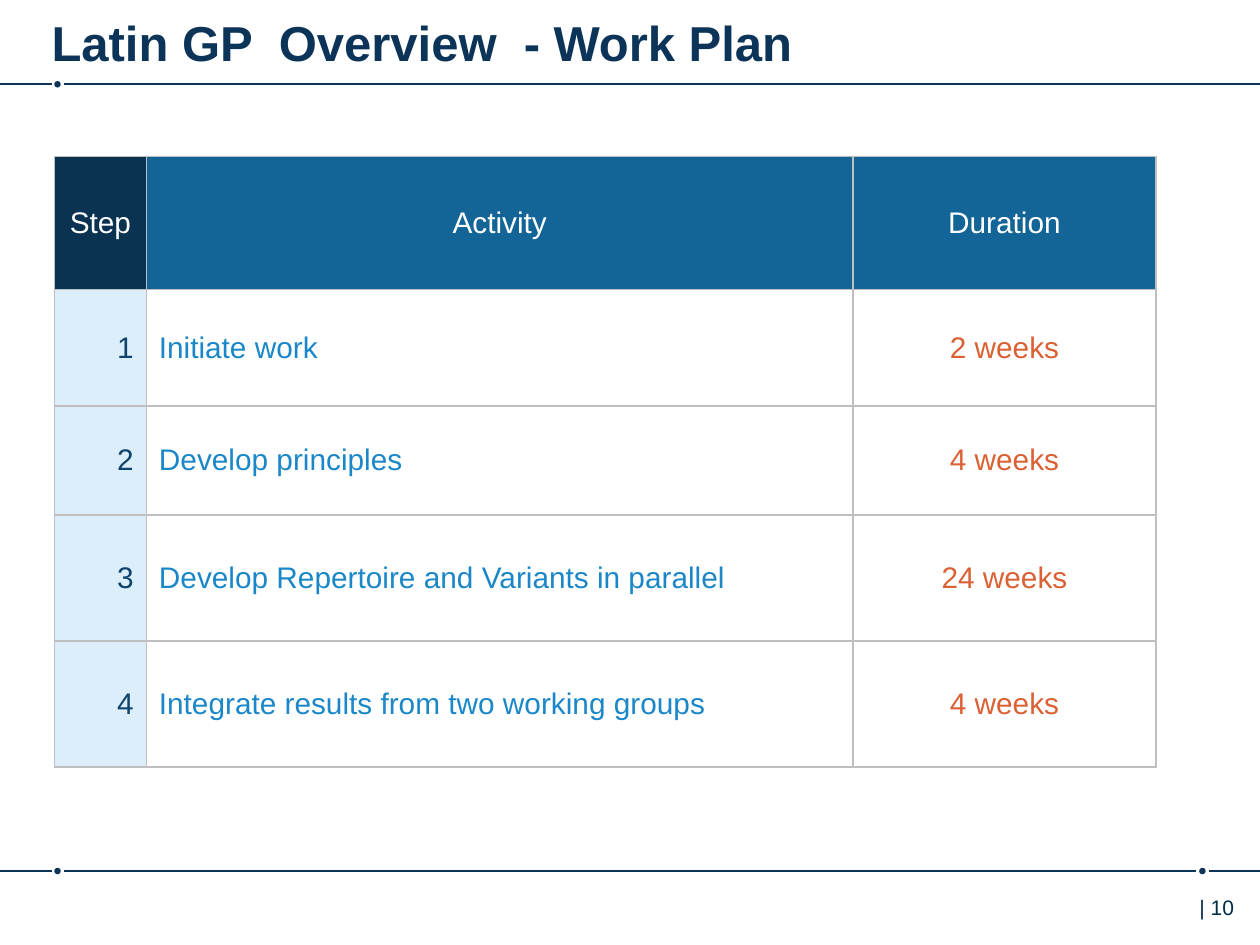
from lxml import etree
from pptx import Presentation
from pptx.dml.color import RGBColor
from pptx.enum import shapes, text
from pptx.oxml import ns
from pptx.util import Cm, Pt

NAVY = RGBColor(0x0C, 0x34, 0x58)
STEP_HEADER = RGBColor(0x0A, 0x32, 0x51)
HEADER = RGBColor(0x13, 0x65, 0x97)
PALE_BLUE = RGBColor(0xCD, 0xE8, 0xF9)
WHITE = RGBColor(0xFF, 0xFF, 0xFF)
STEP_TEXT = RGBColor(0x0D, 0x43, 0x6C)
ACTIVITY_TEXT = RGBColor(0x1A, 0x87, 0xC9)
DURATION_TEXT = RGBColor(0xDB, 0x60, 0x33)
PAGE_TEXT = RGBColor(0x00, 0x2B, 0x49)
BORDER = RGBColor(0xBF, 0xBF, 0xBF)
LEFT, CENTER, RIGHT = text.PP_ALIGN.LEFT, text.PP_ALIGN.CENTER, text.PP_ALIGN.RIGHT


def style_font(paragraph, size, color, bold=False):
    for run in paragraph.runs:
        run.font.name = "Arial"
        run.font.size = Pt(size)
        run.font.bold = bold
        run.font.color.rgb = color


def style_cell(cell, fill, alpha):
    cell.fill.solid()
    cell.fill.fore_color.rgb = fill
    properties = cell._tc.get_or_add_tcPr()
    if alpha < 100:
        tint = properties.find(".//" + ns.qn("a:srgbClr"))
        etree.SubElement(tint, ns.qn("a:alpha"), val=str(alpha * 1000))
    for position, side in enumerate(("lnL", "lnR", "lnT", "lnB")):
        border = etree.Element(ns.qn("a:" + side), w=str(Pt(1)))
        paint = etree.SubElement(border, ns.qn("a:solidFill"))
        etree.SubElement(paint, ns.qn("a:srgbClr"), val=str(BORDER))
        properties.insert(position, border)


deck = Presentation()
deck.slide_width, deck.slide_height = Cm(25.4), Cm(19.05)
slide = deck.slides.add_slide(deck.slide_layouts[5])

TOP_RULE, BOTTOM_RULE = 1.7, 17.56
DOT = 0.13
for x, y in ((1.16, TOP_RULE), (1.16, BOTTOM_RULE), (24.24, BOTTOM_RULE)):
    dot = slide.shapes.add_shape(
        shapes.MSO_SHAPE.OVAL, Cm(x - DOT / 2), Cm(y - DOT / 2), Cm(DOT), Cm(DOT))
    dot.shadow.inherit = False
    dot.fill.solid()
    dot.fill.fore_color.rgb = NAVY
    dot.line.fill.background()

for start, end, y in (
    (1.04, 0, TOP_RULE),
    (25.4, 1.3, TOP_RULE),
    (1.04, 0, BOTTOM_RULE),
    (24.1, 1.3, BOTTOM_RULE),
    (24.37, 25.4, BOTTOM_RULE),
):
    rule = slide.shapes.add_connector(
        shapes.MSO_CONNECTOR.STRAIGHT, Cm(start), Cm(y), Cm(end), Cm(y))
    rule.line.color.rgb = NAVY
    rule.line.width = Pt(1)
    etree.SubElement(rule._element.spPr, ns.qn("a:effectLst"))

page_number = slide.shapes.add_textbox(Cm(24.18), Cm(17.91), Cm(1.22), Cm(1.02))
page_frame = page_number.text_frame
page_frame.text = "| 10"
page_frame.word_wrap = True
page_frame.margin_left = page_frame.margin_right = 0
style_font(page_frame.paragraphs[0], 12, PAGE_TEXT)

title = slide.shapes.title
title.left, title.top, title.width, title.height = Cm(1.04), Cm(0.13), Cm(22.25), Cm(1.24)
title_frame = title.text_frame
title_frame.text = "Latin GP  Overview  - Work Plan"
title_frame.auto_size = text.MSO_AUTO_SIZE.NONE
title_frame.vertical_anchor = text.MSO_ANCHOR.TOP
title_frame.margin_left = title_frame.margin_right = 0
title_frame.margin_top = title_frame.margin_bottom = Cm(0.13)
title_frame.paragraphs[0].alignment = LEFT
style_font(title_frame.paragraphs[0], 28, NAVY, bold=True)

work_plan = (
    ("Step", "Activity", "Duration"),
    ("1", "Initiate work", "2 weeks"),
    ("2", "Develop principles", "4 weeks"),
    ("3", "Develop Repertoire and Variants in parallel", "24 weeks"),
    ("4", "Integrate results from two working groups", "4 weeks"),
)
column_widths = (1.85, 14.25, 6.1)
row_heights = (2.69, 2.34, 2.2, 2.54, 2.54)
header_styles = (
    (STEP_HEADER, WHITE, CENTER),
    (HEADER, WHITE, CENTER),
    (HEADER, WHITE, CENTER),
)
body_styles = (
    (PALE_BLUE, STEP_TEXT, RIGHT),
    (WHITE, ACTIVITY_TEXT, LEFT),
    (WHITE, DURATION_TEXT, CENTER),
)

plan = slide.shapes.add_table(
    len(work_plan), len(column_widths), Cm(1.1), Cm(3.15),
    Cm(sum(column_widths)), Cm(sum(row_heights))).table
plan.first_row = plan.horz_banding = False
for column, width in zip(plan.columns, column_widths):
    column.width = Cm(width)
for row, height in zip(plan.rows, row_heights):
    row.height = Cm(height)

for row_index, entries in enumerate(work_plan):
    styles = body_styles if row_index else header_styles
    for column_index, (entry, style) in enumerate(zip(entries, styles)):
        fill, color, alignment = style
        cell = plan.cell(row_index, column_index)
        cell.text_frame.text = entry
        cell.vertical_anchor = text.MSO_ANCHOR.MIDDLE
        cell.text_frame.paragraphs[0].alignment = alignment
        style_font(cell.text_frame.paragraphs[0], 17, color)
        style_cell(cell, fill, 70 if row_index else 100)

deck.save("out.pptx")
